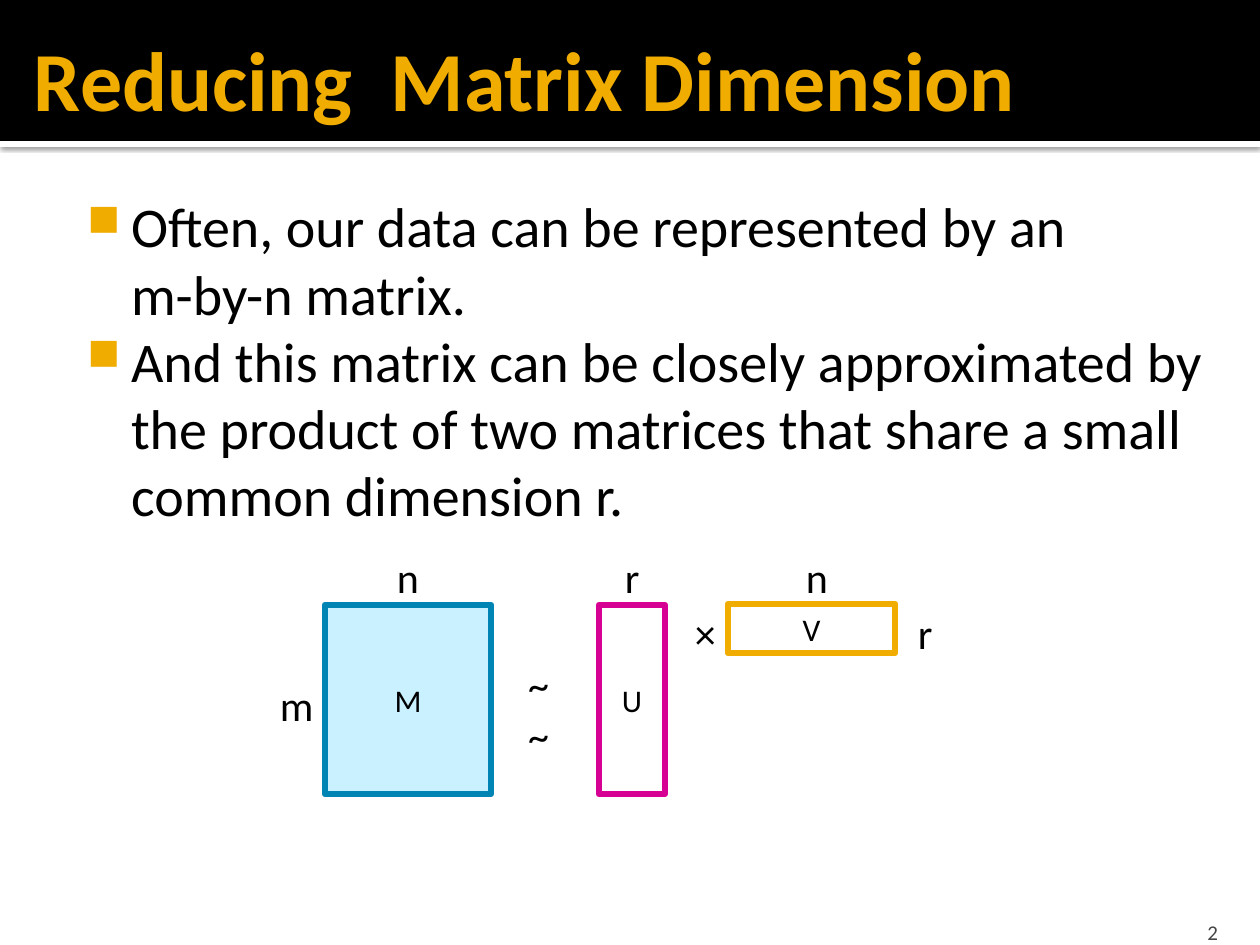
"""Build a slide on approximating a matrix by a product of two thin ones."""
from dataclasses import dataclass
from typing import NamedTuple

from lxml import etree
from pptx import Presentation
from pptx.dml.color import RGBColor
from pptx.enum.shapes import MSO_SHAPE
from pptx.enum.text import MSO_ANCHOR, MSO_AUTO_SIZE, PP_ALIGN
from pptx.oxml.ns import qn
from pptx.util import Pt

RECTANGLE = MSO_SHAPE.RECTANGLE
TOP, MIDDLE, BOTTOM = MSO_ANCHOR.TOP, MSO_ANCHOR.MIDDLE, MSO_ANCHOR.BOTTOM
LEFT, CENTER, RIGHT = PP_ALIGN.LEFT, PP_ALIGN.CENTER, PP_ALIGN.RIGHT
NO_AUTOFIT = MSO_AUTO_SIZE.NONE
EMU_PER_PX = 914400 / 126
TITLE_ONLY = 5


@dataclass(frozen=True)
class Theme:
    font: str = "Calibri"
    black: str = "000000"
    white: str = "FFFFFF"
    gold: str = "F0AD00"
    blue: str = "0084B4"
    pale_blue: str = "C9F1FF"
    magenta: str = "D60093"
    gray: str = "454545"
    title_size: int = 48
    body_size: int = 32
    label_size: int = 24
    matrix_size: int = 18
    number_size: int = 12
    outline: float = 3.78


THEME = Theme()


class Box(NamedTuple):
    left: int
    top: int
    width: int
    height: int


class Insets(NamedTuple):
    left: int = 13
    top: int = 6
    right: int = 13
    bottom: int = 6


class Matrix(NamedTuple):
    name: str
    box: Box
    fill: str
    border: str


class Label(NamedTuple):
    text: str
    left: int
    top: int
    width: int = 48
    height: int = 63


BULLETS = (
    "Often, our data can be represented by an\vm-by-n matrix.",
    "And this matrix can be closely approximated by the product of two "
    "matrices that share a small common dimension r.",
)
MATRICES = (
    Matrix("M", Box(325, 605, 166, 189), THEME.pale_blue, THEME.blue),
    Matrix("U", Box(599, 605, 66, 189), THEME.white, THEME.magenta),
    Matrix("V", Box(728, 604, 167, 49), THEME.white, THEME.gold),
)
LABELS = (
    Label("m", 267, 674, 60),
    Label("n", 793, 546),
    Label("r", 612, 546),
    Label("n", 384, 546),
    Label("r", 905, 602),
    Label("~~", 515, 653, 54, 114),
    Label("×", 682, 602),
)


def px(length: int) -> int:
    """Turn pixels into EMU."""
    return round(length * EMU_PER_PX)


def color(value: str) -> RGBColor:
    """Turn a hex string into a colour."""
    return RGBColor.from_string(value)


def write(shape, text: str, size: int, ink: str = THEME.black, bold: bool = False,
          align=LEFT, anchor=TOP, insets: Insets = Insets()) -> None:
    """Set the text of a shape and format its runs."""
    frame = shape.text_frame
    frame.text = text
    frame.word_wrap = True
    frame.auto_size = NO_AUTOFIT
    frame.vertical_anchor = anchor
    frame.margin_left, frame.margin_top, frame.margin_right, frame.margin_bottom = map(px, insets)
    for paragraph in frame.paragraphs:
        paragraph.alignment = align
        for run in paragraph.runs:
            run.font.name = THEME.font
            run.font.size = Pt(size)
            run.font.bold = bold
            run.font.color.rgb = color(ink)


def add_text(slide, box: Box, text: str, size: int, **style):
    """Add a formatted text box."""
    text_box = slide.shapes.add_textbox(*map(px, box))
    write(text_box, text, size, **style)
    return text_box


def add_rectangle(slide, box: Box, fill: str):
    """Add a filled rectangle without outline or shadow."""
    rectangle = slide.shapes.add_shape(RECTANGLE, *map(px, box))
    rectangle.shadow.inherit = False
    rectangle.fill.solid()
    rectangle.fill.fore_color.rgb = color(fill)
    rectangle.line.fill.background()
    return rectangle


def add_drop_shadow(shape) -> None:
    """Give a shape a soft shadow straight below it."""
    effects = shape.element.spPr.find(qn("a:effectLst"))
    shadow = etree.SubElement(effects, qn("a:outerShdw"), blurRad=str(Pt(2.5)),
                              dist=str(Pt(0.8)), dir="5400000", algn="tl", rotWithShape="0")
    shade = etree.SubElement(shadow, qn("a:srgbClr"), val=THEME.black)
    etree.SubElement(shade, qn("a:alpha"), val="60000")


def add_bullet(paragraph) -> None:
    """Give a paragraph a hanging gold square."""
    properties = paragraph._p.get_or_add_pPr()
    properties.set("marL", str(px(60)))
    properties.set("indent", str(px(-44)))
    bullet_color = etree.SubElement(properties, qn("a:buClr"))
    etree.SubElement(bullet_color, qn("a:srgbClr"), val=THEME.gold)
    etree.SubElement(properties, qn("a:buSzPct"), val="80000")
    etree.SubElement(properties, qn("a:buChar"), char="■")


def add_header(slide) -> None:
    """Draw the title over its black band and white rule."""
    add_drop_shadow(add_rectangle(slide, Box(0, 141, 1260, 6), THEME.white))
    add_rectangle(slide, Box(0, 0, 1260, 141), THEME.black)
    title = slide.shapes.title
    title.element.getparent().append(title.element)
    title.left, title.top, title.width, title.height = map(px, Box(21, 10, 1239, 136))
    write(title, "Reducing  Matrix Dimension", THEME.title_size, ink=THEME.gold,
          bold=True, anchor=MIDDLE, insets=Insets(right=6))


def add_matrix(slide, matrix: Matrix) -> None:
    """Draw one named matrix."""
    rectangle = add_rectangle(slide, matrix.box, matrix.fill)
    rectangle.line.color.rgb = color(matrix.border)
    rectangle.line.width = Pt(THEME.outline)
    write(rectangle, matrix.name, THEME.matrix_size, align=CENTER, anchor=MIDDLE)


def main() -> None:
    """Build and save the slide."""
    deck = Presentation()
    deck.slide_width, deck.slide_height = px(1260), px(945)
    slide = deck.slides.add_slide(deck.slide_layouts[TITLE_ONLY])
    add_header(slide)
    body = add_text(slide, Box(63, 179, 1176, 725), "\n".join(BULLETS), THEME.body_size,
                    insets=Insets(left=8, top=13))
    for paragraph in body.text_frame.paragraphs:
        add_bullet(paragraph)
    add_text(slide, Box(1130, 907, 101, 38), "2", THEME.number_size, ink=THEME.gray,
             align=RIGHT, anchor=BOTTOM, insets=Insets(bottom=0))
    for matrix in MATRICES:
        add_matrix(slide, matrix)
    for label in LABELS:
        add_text(slide, Box(*label[1:]), label.text, THEME.label_size)
    deck.save("out.pptx")


if __name__ == "__main__":
    main()
